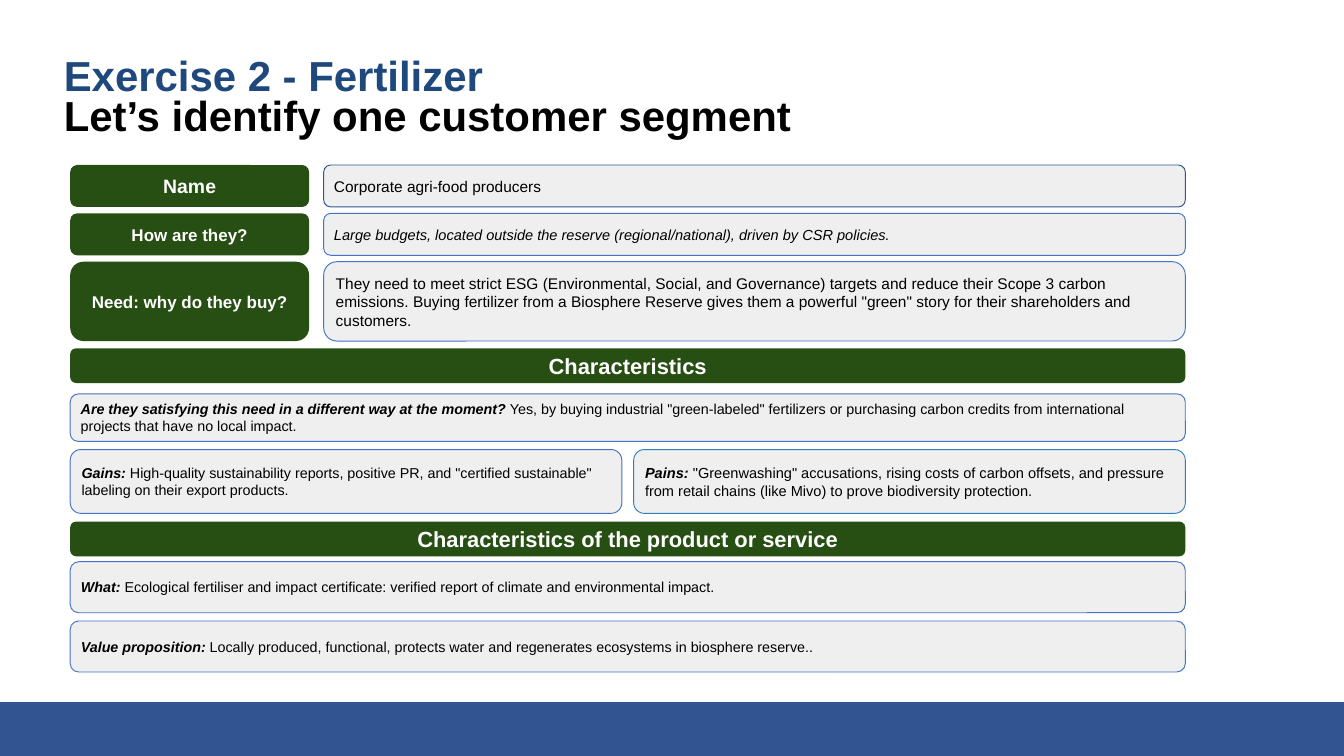
from pptx import Presentation
from pptx.dml.color import RGBColor
from pptx.enum.shapes import MSO_SHAPE as SHAPE
from pptx.enum.text import MSO_ANCHOR as ANCHOR, PP_ALIGN as ALIGN
from pptx.util import Inches, Pt

GREEN, GREY, NAVY, BLUE = "274E13", "EFEFEF", "325490", "4472C4"
LEFT, VALUE_LEFT, RIGHT = 0.77, 3.55, 13.0
FULL, LABEL_W, HALF = RIGHT - LEFT, 2.62, 6.05
VALUE_W = RIGHT - VALUE_LEFT


def rgb(value):
    return RGBColor.from_string(value)


class SegmentSlide:
    font = "Arial"

    def __init__(self, prs):
        self.s = prs.slides.add_slide(prs.slide_layouts[6])

    def shape(self, kind, x, y, w, h, fill, line=None):
        sp = self.s.shapes.add_shape(kind, *map(Inches, (x, y, w, h)))
        sp.shadow.inherit = False
        sp.fill.solid()
        sp.fill.fore_color.rgb = rgb(fill)
        if line:
            sp.line.color.rgb = rgb(line)
            sp.line.width = Pt(0.75)
        else:
            sp.line.fill.background()
        return sp

    def frame(self, sp, margin_x, margin_y, anchor):
        tf = sp.text_frame
        formats = dict(word_wrap=True, vertical_anchor=anchor,
                       margin_left=Inches(margin_x), margin_right=Inches(margin_x),
                       margin_top=Inches(margin_y), margin_bottom=Inches(margin_y))
        for name, value in formats.items():
            setattr(tf, name, value)
        return tf

    def run(self, p, text, size, color, **style):
        r = p.add_run()
        r.text = text
        formats = dict(name=self.font, size=Pt(size), bold=False, italic=False) | style
        for name, value in formats.items():
            setattr(r.font, name, value)
        r.font.color.rgb = rgb(color)

    def label(self, x, y, w, h, text, size):
        sp = self.shape(SHAPE.ROUNDED_RECTANGLE, x, y, w, h, GREEN)
        p = self.frame(sp, 0.1, 0.05, ANCHOR.MIDDLE).paragraphs[0]
        p.alignment = ALIGN.CENTER
        self.run(p, text, size, "FFFFFF", bold=True)

    def panel(self, x, y, w, h, text, size, lead="", line=BLUE, italic=False):
        sp = self.shape(SHAPE.ROUNDED_RECTANGLE, x, y, w, h, GREY, line)
        p = self.frame(sp, 0.09, 0.04, ANCHOR.MIDDLE).paragraphs[0]
        p.alignment = ALIGN.LEFT
        if lead:
            self.run(p, lead + " ", size, "000000", bold=True, italic=True)
        self.run(p, text, size, "000000", italic=italic)

    def title(self, x, y, w, h, lines, size):
        sp = self.s.shapes.add_textbox(*map(Inches, (x, y, w, h)))
        tf = self.frame(sp, 0, 0, ANCHOR.TOP)
        for i, (text, color) in enumerate(lines):
            p = tf.add_paragraph() if i else tf.paragraphs[0]
            p.line_spacing = 0.8
            self.run(p, text, size, color, bold=True)


def main():
    prs = Presentation()
    prs.slide_width, prs.slide_height = Inches(14.74), Inches(8.29)
    slide = SegmentSlide(prs)

    # Footer band and title
    slide.shape(SHAPE.RECTANGLE, 0, 7.7, 14.74, 0.59, NAVY)
    slide.title(0.7, 0.65, 11.33, 0.43,
                [("Exercise 2 - Fertilizer", "1F497D"),
                 ("Let’s identify one customer segment", "000000")], 33.1)

    # Customer segment: label and answer per row
    rows = [
        (1.81, 0.46, "Name", 15.3, "Corporate agri-food producers", 12.2,
         dict(line=NAVY)),
        (2.34, 0.46, "How are they?", 13.4,
         "Large budgets, located outside the reserve (regional/national), "
         "driven by CSR policies.", 11.5, dict(italic=True)),
        (2.87, 0.87, "Need: why do they buy?", 13.4,
         "They need to meet strict ESG (Environmental, Social, and Governance) "
         "targets and reduce their Scope 3 carbon emissions. Buying fertilizer "
         "from a Biosphere Reserve gives them a powerful \"green\" story for "
         "their shareholders and customers.", 12.2, {}),
    ]
    for y, h, label, label_size, answer, size, style in rows:
        slide.label(LEFT, y, LABEL_W, h, label, label_size)
        slide.panel(VALUE_LEFT, y, VALUE_W, h, answer, size, **style)

    # Section headings
    for y, heading in [(3.82, "Characteristics"),
                       (5.72, "Characteristics of the product or service")]:
        slide.label(LEFT, y, FULL, 0.38, heading, 17.3)

    # Panels with a lead-in
    slide.panel(LEFT, 4.32, FULL, 0.52,
                "Yes, by buying industrial \"green-labeled\" fertilizers or "
                "purchasing carbon credits from international projects that "
                "have no local impact.", 11.3,
                "Are they satisfying this need in a different way at the moment?")
    slide.panel(LEFT, 4.93, HALF, 0.7,
                "High-quality sustainability reports, positive PR, and "
                "\"certified sustainable\" labeling on their export products.",
                11.3, "Gains:")
    slide.panel(RIGHT - HALF, 4.93, HALF, 0.7,
                "\"Greenwashing\" accusations, rising costs of carbon offsets, "
                "and pressure from retail chains (like Mivo) to prove "
                "biodiversity protection.", 11.5, "Pains:", line="2F7FB8")
    slide.panel(LEFT, 6.16, FULL, 0.56,
                "Ecological fertiliser and impact certificate: verified report "
                "of climate and environmental impact.", 11.3, "What:")
    slide.panel(LEFT, 6.81, FULL, 0.56,
                "Locally produced, functional, protects water and regenerates "
                "ecosystems in biosphere reserve..", 11.3, "Value proposition:")

    prs.save("out.pptx")


if __name__ == "__main__":
    main()
